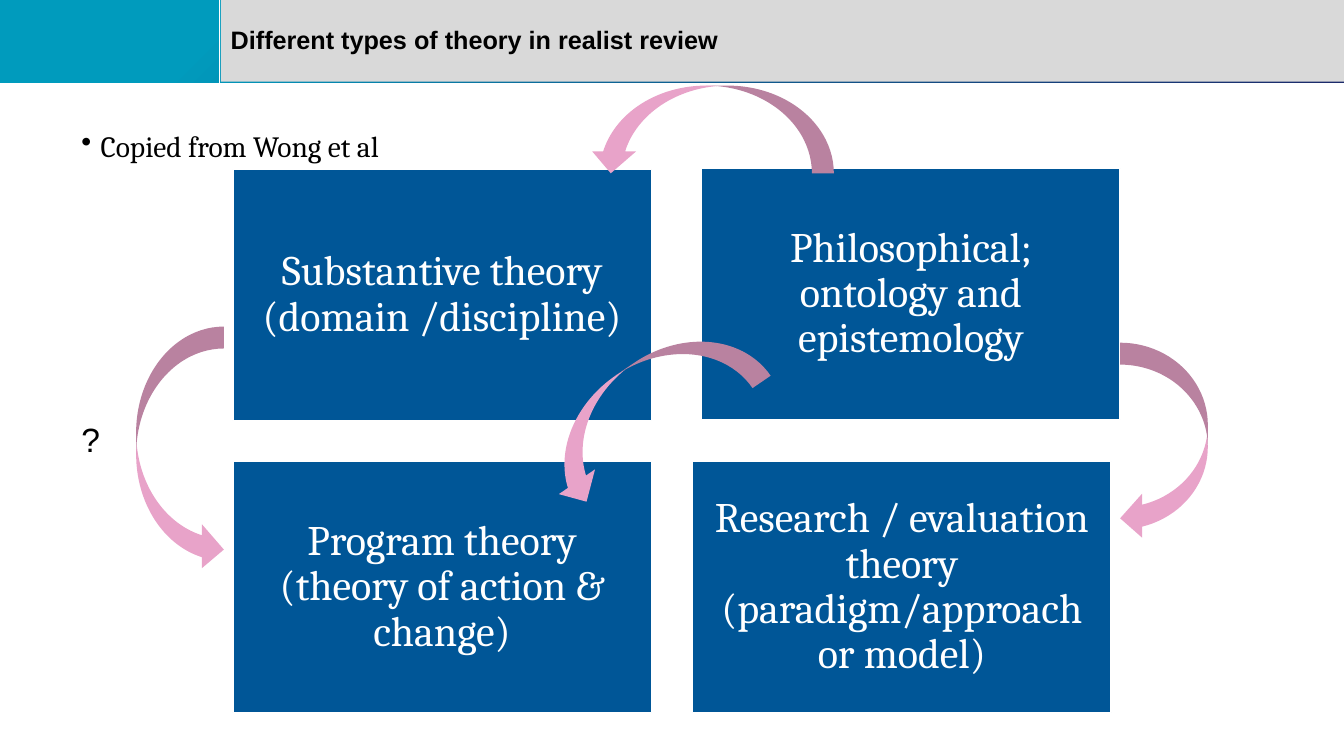
from copy import deepcopy

from pptx import Presentation
from pptx.dml.color import RGBColor as RGB
from pptx.enum.shapes import MSO_CONNECTOR as LINE, MSO_SHAPE as SHAPE
from pptx.enum.text import MSO_ANCHOR as ANCHOR, PP_ALIGN as ALIGN
from pptx.oxml.ns import qn
from pptx.util import Inches, Pt

COLORS = {
    "teal": "009BBD", "ocean": "0E6394", "navy": "1B2A6B", "band": "D9D9D9",
    "theory": "005697", "arrow": "E8A3C9", "white": "FFFFFF", "black": "000000",
}
FORMATS = {
    "title": {"name": "Arial", "size": Pt(18), "bold": True},
    "body": {"name": "Cambria", "size": Pt(21)},
    "theory": {"name": "Cambria", "size": Pt(30)},
    "question": {"name": "Arial", "size": Pt(24)},
}


class TheorySlide:
    def __init__(self, deck):
        self.shapes = deck.slides.add_slide(deck.slide_layouts[6]).shapes

    def color(self, name):
        return RGB.from_string(COLORS[name])

    def fill_text(self, frame, text, style, color="black", anchor=ANCHOR.TOP,
                  align=ALIGN.LEFT, spacing=0.9, inset=None, bullet=None):
        frame.word_wrap = True
        frame.vertical_anchor = anchor
        if inset is not None:
            for side in ("left", "top", "right", "bottom"):
                setattr(frame, f"margin_{side}", Inches(inset))
        paragraph = frame.paragraphs[0]
        paragraph.text = text
        paragraph.alignment = align
        paragraph.line_spacing = spacing
        if bullet:
            props = paragraph._p.get_or_add_pPr()
            props.set("marL", str(Inches(0.19)))
            props.set("indent", str(-Inches(0.19)))
            mark = props.makeelement(qn("a:buChar"), {"char": bullet})
            props.append(mark)
        font = paragraph.runs[0].font
        for key, value in FORMATS[style].items():
            setattr(font, key, value)
        font.color.rgb = self.color(color)

    def text(self, at, text, style, **layout):
        box = self.shapes.add_textbox(*map(Inches, at))
        self.fill_text(box.text_frame, text, style, **layout)

    def shape(self, kind, at, fill=None):
        item = self.shapes.add_shape(kind, *map(Inches, at))
        item.shadow.inherit = False
        item.line.fill.background()
        if fill:
            item.fill.solid()
            item.fill.fore_color.rgb = self.color(fill)
        return item

    def gradient_band(self, at, stops, angle):
        band = self.shape(SHAPE.RECTANGLE, at)
        band.fill.gradient()
        band.fill.gradient_angle = angle
        stop_list = band._element.spPr.find(".//" + qn("a:gsLst"))
        stop_list.append(deepcopy(stop_list[-1]))
        for stop, (position, name) in zip(band.fill.gradient_stops, stops):
            stop.position = position
            stop.color.rgb = self.color(name)

    def divider(self, x, bottom):
        rule = self.shapes.add_connector(
            LINE.STRAIGHT, Inches(x), 0, Inches(x), Inches(bottom))
        rule.line.color.rgb = self.color("white")
        rule.line.width = Pt(0.5)
        props = rule._element.spPr
        props.append(props.makeelement(qn("a:effectLst"), {}))

    def theory(self, left, top, text):
        card = self.shape(SHAPE.RECTANGLE, (left, top, 4.15, 2.49), "theory")
        card.line.color.rgb = self.color("white")
        card.line.width = Pt(1)
        self.fill_text(card.text_frame, text, "theory", color="white",
                       anchor=ANCHOR.MIDDLE, align=ALIGN.CENTER, inset=0.12)

    def arrow(self, left, top, height, rotation=0, flipped=True):
        arrow = self.shape(SHAPE.CURVED_LEFT_ARROW, (left, top, 0.87, height), "arrow")
        arrow.rotation = rotation
        if flipped:
            arrow._element.spPr.find(qn("a:xfrm")).set("flipV", "1")


def main():
    deck = Presentation()
    deck.slide_width, deck.slide_height = Inches(13.33), Inches(7.5)
    slide = TheorySlide(deck)

    slide.gradient_band((0, 0, 13.33, 0.82),
                        [(0.17, "teal"), (0.5, "ocean"), (1, "navy")], 315)
    slide.shape(SHAPE.RECTANGLE, (2.19, 0, 11.14, 0.81), "band")
    slide.divider(2.18, 0.98)
    slide.text((2.19, 0.03, 11.14, 0.76), "Different types of theory in realist review",
               "title", anchor=ANCHOR.MIDDLE)
    slide.text((0.71, 1.26, 11.5, 4.76), "Copied from Wong et al", "body", bullet="•")

    for left, top, theory in (
        (2.31, 1.68, "Substantive theory (domain /discipline)"),
        (6.96, 1.67, "Philosophical; ontology and epistemology"),
        (2.31, 4.58, "Program theory (theory of action & change)"),
        (6.87, 4.58, "Research / evaluation theory (paradigm/approach or model)"),
    ):
        slide.theory(left, top, theory)

    slide.arrow(11.11, 3.4, 1.96, flipped=False)
    for left, top, rotation in ((5.96, 2.84, 235.6), (6.62, 0.07, 270), (1.35, 3.24, 180)):
        slide.arrow(left, top, 2.43, rotation)

    slide.text((0.71, 4.11, 0.65, 0.5), "?", "question", spacing=1)
    deck.save("out.pptx")


if __name__ == "__main__":
    main()
